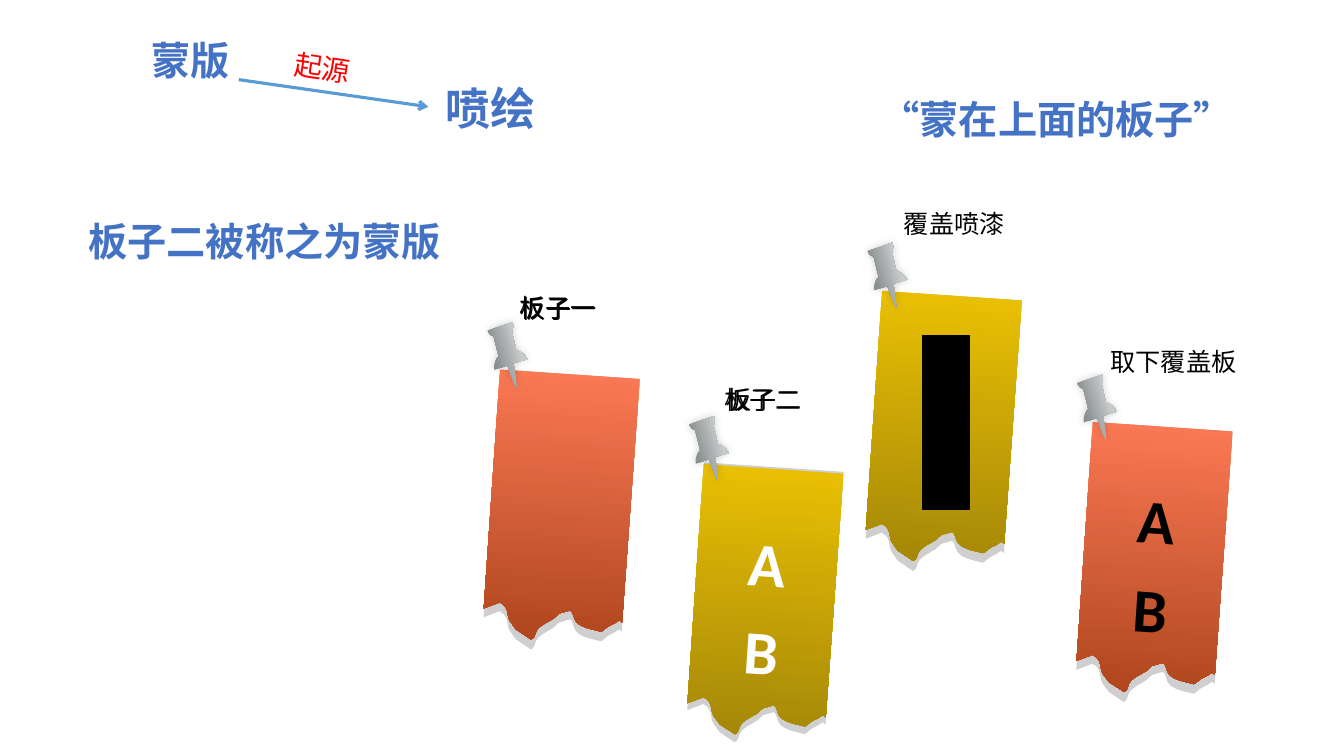
from copy import deepcopy

from lxml.etree import SubElement
from pptx import Presentation
from pptx.dml.color import RGBColor
from pptx.enum.shapes import MSO_CONNECTOR, MSO_SHAPE
from pptx.enum.text import MSO_ANCHOR, MSO_AUTO_SIZE, PP_ALIGN
from pptx.oxml.ns import qn
from pptx.util import Pt

# Content: text, left, top, width, height, format
TITLE = "板子二被称之为蒙版"
BLUE, BLACK, WHITE, RED = "4472C4", "000000", "FFFFFF", "FF0000"
HEADINGS = [
    ("蒙版", 100.8, 22.3, 70.6, 41, dict(size=28, color=BLUE, bold=True)),
    ("喷绘", 311, 54, 78.5, 45.4, dict(size=32, color=BLUE, bold=True)),
    ("“蒙在上面的板子”", 622, 64.8, 266.4, 41, dict(size=28, color=BLUE, bold=True)),
    ("起源", 203, 34.6, 81.4, 31.7, dict(size=20, color=RED, rotation=8.5)),
]
ORANGE = [(0, "FC7A56"), (100, "AD451B")]
GOLD = [(0, "EBC103"), (100, "A38609")]
STEEL = [(0, "8A8F8F"), (35, "8A8F8F"), (64, "C7CACA"), (83, "BDBDBD")]

# Boards: strip corner, pin corner, label places (two give a heavier label)
BOARDS = [
    dict(label="板子一", strip=(350.6, 267.1), pin=(342, 231.8), fill=ORANGE,
         labels=[(364.3, 205.2), (365, 205.9)]),
    dict(label="板子二", strip=(496.1, 334.8), pin=(486, 298.8), fill=GOLD,
         labels=[(510.5, 270.7), (511.9, 270.7)], letters="AB", color=WHITE,
         shadow_rise=1.4),
    dict(label="覆盖喷漆", strip=(623.5, 211), pin=(613.4, 175), fill=GOLD,
         labels=[(638.6, 145.4)], window=(658.8, 239.8, 33.8, 123.8)),
    dict(label="取下覆盖板", strip=(774, 304.6), pin=(763.2, 269.3), fill=ORANGE,
         labels=[(786.2, 244.1)], letters="AB", color=BLACK),
]
STRIP_SIZE, SHADOW_SIZE, STRIP_TILT = (100, 190.8), (100, 198), 3.9
PIN_SIZE, PIN_TILT = (39.6, 37.4), 298.5

# Outlines: grid size, then corners (x, y) and curves (two controls, end)
STRIP = ((139, 265), [
    (0, 0), (0, 237.5), (15.7, 230.5), (26, 235, 22.6, 243, 27, 248.7),
    (33.5, 256.3), (49, 265), (53, 264, 52.6, 257, 54.5, 255),
    (56.3, 252, 57.3, 252, 60, 249.5), (69.7, 243), (75.3, 237.4), (86, 233.7),
    (89.2, 235.5, 89.7, 242.5, 93, 245), (97, 249, 105, 250.4, 108.3, 251),
    (117.5, 252.6), (119.4, 252.5, 120.3, 250.4, 122, 249.3),
    (123, 248, 126, 246, 128, 245), (132, 242.6),
    (132.7, 241.5, 134.7, 240.4, 135.7, 240.3), (138, 242.2), (139, 0)])
PIN = ((55, 53), [
    (36, 0), (55, 18), (53, 21, 49, 22, 47, 22), (32.5, 35),
    (34, 40, 32.5, 45.5, 30, 49), (20, 39), (13, 43.5, 8, 48.5, 0, 53),
    (5, 45.5, 10, 40.5, 15, 34.5), (5, 25), (7.5, 22.5, 11.5, 21.5, 16, 21.5),
    (17.5, 22, 18.5, 22, 18.5, 22.5), (34, 8), (33, 5, 34, 2.5, 36, 0)])
CURVE_STEPS = 6


def rgb(value):
    return RGBColor.from_string(value)


def write(frame, lines, size=18, color=BLACK, bold=False, align=PP_ALIGN.LEFT, spacing=1.0):
    for index, line in enumerate(lines):
        paragraph = frame.paragraphs[0] if index == 0 else frame.add_paragraph()
        paragraph.alignment = align
        paragraph.line_spacing = spacing
        run = paragraph.add_run()
        run.text = line
        run.font.name = "Calibri"
        run.font.size = Pt(size)
        run.font.bold = bold
        run.font.color.rgb = rgb(color)


def add_text(shapes, text, left, top, width, height, rotation=0, **text_format):
    box = shapes.add_textbox(Pt(left), Pt(top), Pt(width), Pt(height))
    box.rotation = rotation
    box.text_frame.word_wrap = rotation != 0
    write(box.text_frame, [text], **text_format)


def flatten(outline):
    """Turn corners and curves into plain points."""
    points = []
    for step in outline:
        if len(step) == 2:
            points.append(step)
            continue
        start, controls = points[-1], (step[:2], step[2:4], step[4:])
        for index in range(1, CURVE_STEPS + 1):
            t = index / CURVE_STEPS
            weights = ((1 - t) ** 3, 3 * t * (1 - t) ** 2, 3 * t * t * (1 - t), t ** 3)
            points.append(tuple(
                sum(weight * point[axis] for weight, point in zip(weights, (start, *controls)))
                for axis in (0, 1)))
    return points


def add_outline(shapes, outline, corner, size, rotation):
    grid, steps = outline
    points = [tuple(Pt(corner[axis] + point[axis] / grid[axis] * size[axis]) for axis in (0, 1))
              for point in flatten(steps)]
    builder = shapes.build_freeform(*points[0])
    builder.add_line_segments(points[1:], close=True)
    shape = builder.convert_to_shape()
    shape.rotation = rotation
    shape.shadow.inherit = False
    shape.line.fill.background()
    return shape


def fill_gradient(shape, stops, angle):
    shape.fill.gradient()
    shape.fill.gradient_angle = 360 - angle
    stop_list = shape.element.spPr.find(qn("a:gradFill")).find(qn("a:gsLst"))
    while len(stop_list) < len(stops):
        stop_list.append(deepcopy(stop_list[-1]))
    for stop, (position, color) in zip(shape.fill.gradient_stops, stops):
        stop.position = position / 100
        stop.color.rgb = rgb(color)


def add_soft_shadow(shape):
    effects = shape.element.spPr.find(qn("a:effectLst"))
    shadow = SubElement(effects, qn("a:outerShdw"), blurRad=str(Pt(6)), dist="0",
                        dir=str(225 * 60000), rotWithShape="0")
    color = SubElement(shadow, qn("a:srgbClr"), val=BLACK)
    SubElement(color, qn("a:alpha"), val="20000")


def add_board(slide, board):
    shapes = slide.shapes.add_group_shape().shapes
    left, top = board["strip"]

    # Paper shadow and torn strip
    shadow_corner = (left, top - board.get("shadow_rise", 0))
    paper_shadow = add_outline(shapes, STRIP, shadow_corner, SHADOW_SIZE, STRIP_TILT)
    paper_shadow.fill.solid()
    paper_shadow.fill.fore_color.rgb = rgb("CFCFCF")
    strip = add_outline(shapes, STRIP, (left, top), STRIP_SIZE, STRIP_TILT)
    fill_gradient(strip, board["fill"], 90)
    if "letters" in board:
        frame = strip.text_frame
        frame.vertical_anchor = MSO_ANCHOR.MIDDLE
        frame.margin_left = frame.margin_right = Pt(6)
        frame.margin_top, frame.margin_bottom = Pt(3.6), Pt(8.6)
        write(frame, board["letters"], size=44, color=board["color"], bold=True,
              align=PP_ALIGN.CENTER, spacing=1.2)

    # Pin, label and painted window
    pin = add_outline(shapes, PIN, board["pin"], PIN_SIZE, PIN_TILT)
    fill_gradient(pin, STEEL, 45)
    add_soft_shadow(pin)
    for label_left, label_top in board["labels"]:
        add_text(shapes, board["label"], label_left, label_top,
                 14.4 + 18 * len(board["label"]), 29)
    if "window" in board:
        window = shapes.add_shape(MSO_SHAPE.RECTANGLE, *map(Pt, board["window"]))
        window.shadow.inherit = False
        window.fill.solid()
        window.fill.fore_color.rgb = rgb(BLACK)
        window.line.color.rgb = rgb(BLACK)
        window.line.width = Pt(1)


def add_arrow(slide, start, end):
    arrow = slide.shapes.add_connector(MSO_CONNECTOR.STRAIGHT, *map(Pt, start + end))
    arrow.line.color.rgb = rgb("5B9BD5")
    arrow.line.width = Pt(2.25)
    properties = arrow.element.spPr
    SubElement(properties.find(qn("a:ln")), qn("a:tailEnd"), type="arrow")
    SubElement(properties, qn("a:effectLst"))


def main():
    presentation = Presentation()
    presentation.slide_width, presentation.slide_height = Pt(960), Pt(540)
    slide = presentation.slides.add_slide(presentation.slide_layouts[5])

    # Title
    title = slide.shapes.title
    title.left, title.top, title.width, title.height = map(Pt, (56, 151.4, 290, 46))
    title.text_frame.auto_size = MSO_AUTO_SIZE.NONE
    title.text_frame.vertical_anchor = MSO_ANCHOR.MIDDLE
    write(title.text_frame, [TITLE], size=28, color=BLUE, bold=True, spacing=0.9)

    # Boards, headings and arrow
    for board in BOARDS:
        add_board(slide, board)
    for text, left, top, width, height, text_format in HEADINGS:
        add_text(slide.shapes, text, left, top, width, height, **text_format)
    add_arrow(slide, (170.6, 56.9), (306, 76.3))

    presentation.save("out.pptx")


if __name__ == "__main__":
    main()
